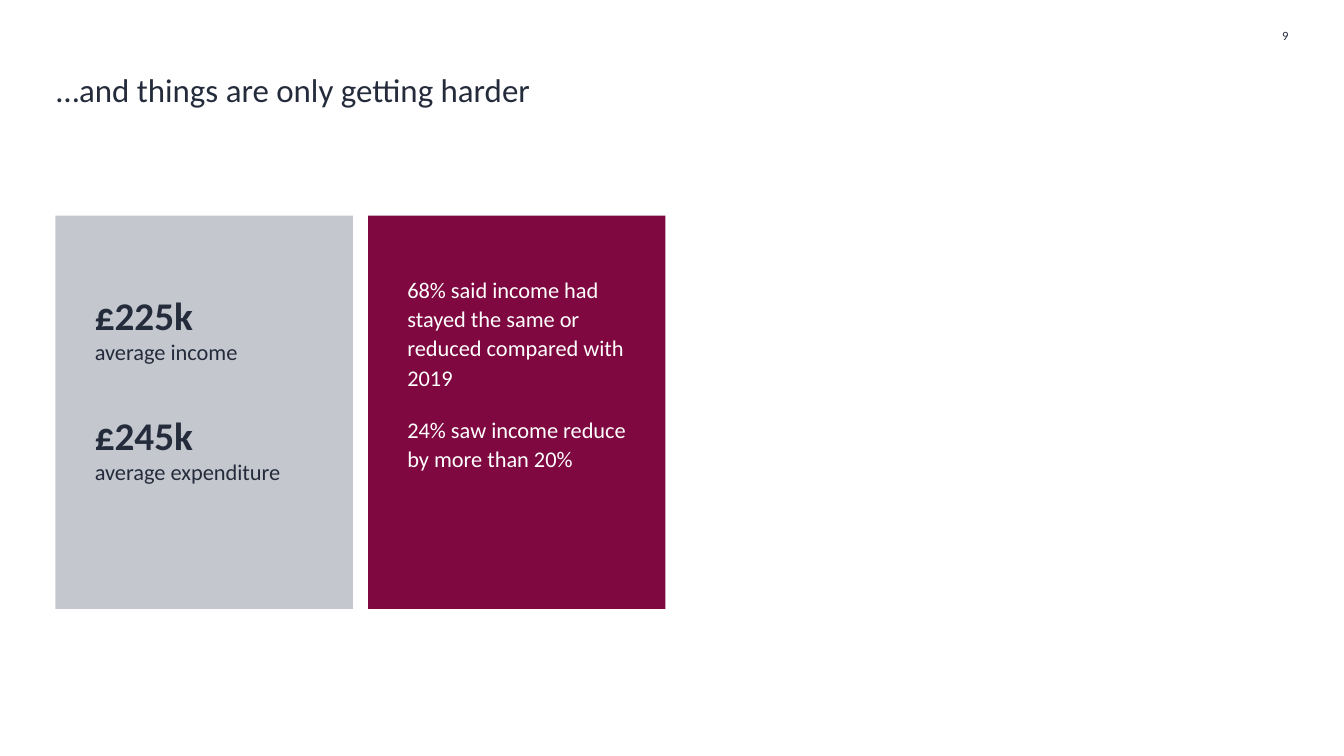
from pptx import Presentation
from pptx.dml.color import RGBColor
from pptx.enum.shapes import MSO_SHAPE
from pptx.enum.text import MSO_ANCHOR, PP_ALIGN
from pptx.util import Inches, Pt

# Content
INK, WHITE, GREY, WINE = "242B3B", "FFFFFF", "C4C8CE", "7E083F"
TITLE = "…and things are only getting harder"
PAGE_NUMBER = "9"

# Paragraphs: (text, size, bold, space before)
FINANCES = [
    ("£225k", 28, True, 0),
    ("average income", 16, False, 0),
    ("£245k", 28, True, 33),
    ("average expenditure", 16, False, 0),
]
CHANGES = [
    ("68% said income had stayed the same or reduced compared with 2019", 16, False, 0),
    ("24% saw income reduce by more than 20%", 16, False, 16),
]
# Cards: (fill, text colour, top inset, line spacing, paragraphs)
CARDS = [
    (GREY, INK, 0.75, None, FINANCES),
    (WINE, WHITE, 0.57, Pt(21), CHANGES),
]
CARD_LEFT, CARD_TOP, CARD_W, CARD_H, CARD_GAP = 0.55, 2.14, 2.95, 3.9, 0.15


def rgb(value):
    return RGBColor.from_string(value)


def write(sp, paragraphs, color, insets=(0, 0, 0, 0), align=PP_ALIGN.LEFT,
          anchor=MSO_ANCHOR.TOP, spacing=None):
    tf = sp.text_frame
    tf.word_wrap = True
    tf.vertical_anchor = anchor
    tf.margin_left, tf.margin_top, tf.margin_right, tf.margin_bottom = map(Inches, insets)
    for i, (text, size, bold, before) in enumerate(paragraphs):
        p = tf.paragraphs[0] if i == 0 else tf.add_paragraph()
        p.alignment = align
        p.space_before = Pt(before)
        p.line_spacing = spacing
        r = p.add_run()
        r.text = text
        r.font.name = "Calibri"
        r.font.size = Pt(size)
        r.font.bold = bold
        r.font.color.rgb = rgb(color)


prs = Presentation()
prs.slide_width, prs.slide_height = Inches(13.33), Inches(7.5)
s = prs.slides.add_slide(prs.slide_layouts[6])

# Title and page number
title = s.shapes.add_textbox(Inches(0.56), Inches(0.69), Inches(12.22), Inches(0.4))
write(title, [(TITLE, 23.5, False, 0)], INK)
number = s.shapes.add_textbox(Inches(12.25), Inches(0.28), Inches(0.53), Inches(0.15))
write(number, [(PAGE_NUMBER, 9, False, 0)], INK, align=PP_ALIGN.RIGHT,
      anchor=MSO_ANCHOR.MIDDLE)

# Cards
for i, (fill, color, top_inset, spacing, paragraphs) in enumerate(CARDS):
    left = CARD_LEFT + i * (CARD_W + CARD_GAP)
    sp = s.shapes.add_shape(MSO_SHAPE.RECTANGLE, Inches(left), Inches(CARD_TOP),
                            Inches(CARD_W), Inches(CARD_H))
    sp.shadow.inherit = False
    sp.fill.solid()
    sp.fill.fore_color.rgb = rgb(fill)
    sp.line.fill.background()
    write(sp, paragraphs, color, (0.39, top_inset, 0.39, 0.79), spacing=spacing)

prs.save("out.pptx")
